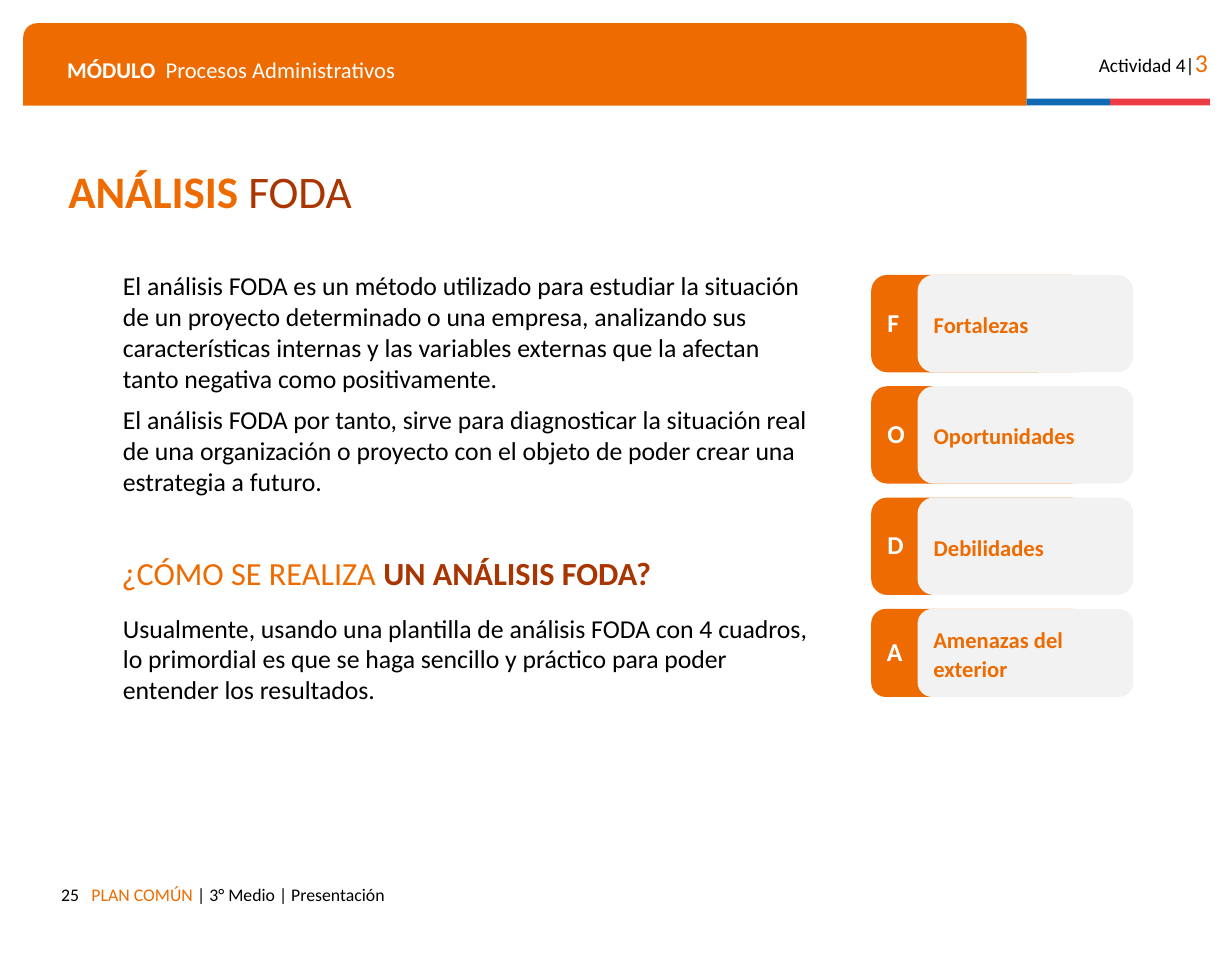
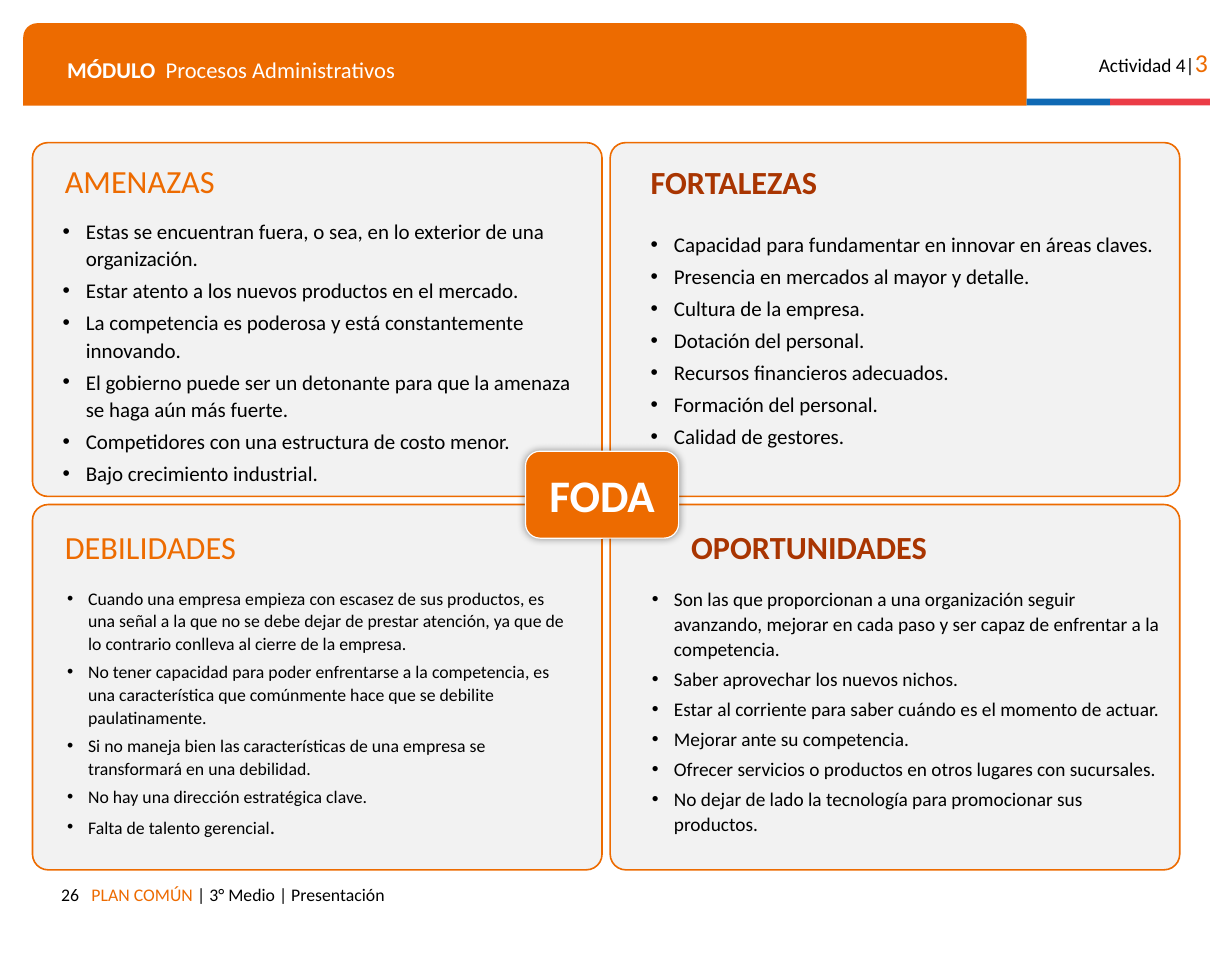
from lxml import etree
from pptx import Presentation
from pptx.dml.color import RGBColor
from pptx.enum.shapes import MSO_SHAPE
from pptx.enum.text import MSO_ANCHOR, PP_ALIGN
from pptx.oxml.ns import qn
from pptx.util import Inches, Pt

FONT = "Calibri"
COLORS = {
    "orange": "ED6B00", "rust": "A93501", "blue": "0F69B4", "red": "EB3C46",
    "gray": "F2F2F2", "black": "000000", "white": "FFFFFF",
}

# Content: a run is (text, size, color, bold)
MODULE = [("MÓDULO", 14, "white", True), ("\tProcesos Administrativos", 14, "white", False)]
ACTIVITY = [("Actividad 4|", 12, "black", False), ("3", 16, "orange", False)]
FOOTER = [("PLAN COMÚN ", 11, "orange", False), ("| 3° Medio | Presentación", 11, "black", False)]

TITLE = [("ANÁLISIS ", 28, "orange", True), ("FODA", 28, "rust", False)]
INTRO = [
    "El análisis FODA es un método utilizado para estudiar la situación de un proyecto "
    "determinado o una empresa, analizando sus características internas y las variables "
    "externas que la afectan tanto negativa como positivamente.",
    "El análisis FODA por tanto, sirve para diagnosticar la situación real de una "
    "organización o proyecto con el objeto de poder crear una estrategia a futuro.",
]
QUESTION = [("¿CÓMO SE REALIZA ", 20, "orange", False), ("UN ANÁLISIS FODA?", 20, "rust", True)]
ANSWER = [
    "Usualmente, usando una plantilla de análisis FODA con 4 cuadros, lo primordial es que "
    "se haga sencillo y práctico para poder entender los resultados.",
]
# letter, label, card height
CARDS = [
    ("F", "Fortalezas", 0.84), ("O", "Oportunidades", 0.84),
    ("D", "Debilidades", 0.84), ("A", "Amenazas del exterior", 0.76),
]

# Row by row; an item is a string or a list of (text, size)
QUADRANTS = [
    {"title": ("AMENAZAS", 20, "orange", False), "title_at": (0.46, 1.34),
     "list_at": (0.49, 1.82), "size": 13, "hanging": 0.2, "items": [
        "Estas se encuentran fuera, o sea, en lo exterior de una organización.",
        "Estar atento a los nuevos productos en el mercado.",
        "La competencia es poderosa y está constantemente innovando.",
        "El gobierno puede ser un detonante para que la amenaza se haga aún más fuerte.",
        "Competidores con una estructura de costo menor.",
        "Bajo crecimiento industrial."]},
    {"title": ("FORTALEZAS", 20, "rust", True), "title_at": (5.51, 1.35),
     "list_at": (5.56, 1.93), "size": 13, "hanging": 0.2, "items": [
        "Capacidad para fundamentar en innovar en áreas claves.",
        "Presencia en mercados al mayor y detalle.",
        "Cultura de la empresa.",
        "Dotación del personal.",
        "Recursos financieros adecuados.",
        "Formación del personal.",
        "Calidad de gestores."]},
    {"title": ("DEBILIDADES", 20, "orange", False), "title_at": (0.46, 4.5),
     "list_at": (0.51, 5), "size": 11, "hanging": 0.18, "items": [
        "Cuando una empresa empieza con escasez de sus productos, es una señal a la que no "
        "se debe dejar de prestar atención, ya que de lo contrario conlleva al cierre de la empresa.",
        "No tener capacidad para poder enfrentarse a la competencia, es una característica "
        "que comúnmente hace que se debilite paulatinamente.",
        "Si no maneja bien las características de una empresa se transformará en una debilidad.",
        "No hay una dirección estratégica clave.",
        [("Falta de talento gerencial", 11), (".", 13)]]},
    {"title": ("OPORTUNIDADES", 20, "rust", True), "title_at": (5.86, 4.5),
     "list_at": (5.56, 5), "size": 12, "hanging": 0.19, "items": [
        "Son las que proporcionan a una organización seguir avanzando, mejorar en cada paso "
        "y ser capaz de enfrentar a la competencia.",
        "Saber aprovechar los nuevos nichos.",
        "Estar al corriente para saber cuándo es el momento de actuar.",
        "Mejorar ante su competencia.",
        "Ofrecer servicios o productos en otros lugares con sucursales.",
        "No dejar de lado la tecnología para promocionar sus productos."]},
]


def rgb(name):
    return RGBColor.from_string(COLORS[name])


def add_xml(parent, tag, **attrs):
    return etree.SubElement(parent, qn(tag), attrs)


def add_bullet(p, hanging):
    pPr = p._p.get_or_add_pPr()
    pPr.set("marL", str(Inches(0.2)))
    pPr.set("indent", str(-Inches(hanging)))
    add_xml(add_xml(pPr, "a:buClr"), "a:srgbClr", val=COLORS["black"])
    add_xml(pPr, "a:buFont", typeface="Arial")
    add_xml(pPr, "a:buChar", char="•")


def add_tab(p, position):
    tabs = add_xml(p._p.get_or_add_pPr(), "a:tabLst")
    add_xml(tabs, "a:tab", pos=str(Inches(position)), algn="l")


def fill_text(sp, paragraphs, inset=(0.1, 0.1), anchor=MSO_ANCHOR.TOP,
              align=PP_ALIGN.LEFT, spacing=None, before=0, hanging=None, tab=None):
    """Write paragraphs, each a list of runs; inset is (sides, top and bottom)."""
    tf = sp.text_frame
    tf.word_wrap = True
    tf.vertical_anchor = anchor
    tf.margin_left = tf.margin_right = Inches(inset[0])
    tf.margin_top = tf.margin_bottom = Inches(inset[1])
    for i, runs in enumerate(paragraphs):
        p = tf.add_paragraph() if i else tf.paragraphs[0]
        if hanging:
            add_bullet(p, hanging)
        if tab:
            add_tab(p, tab)
        p.alignment = align
        if spacing:
            p.line_spacing = spacing
        if i and before:
            p.space_before = Pt(before)
        for text, size, color, bold in runs:
            r = p.add_run()
            r.text = text
            r.font.name = FONT
            r.font.size = Pt(size)
            r.font.bold = bold
            r.font.color.rgb = rgb(color)


def add_text(s, at, paragraphs, **style):
    fill_text(s.shapes.add_textbox(*map(Inches, at)), paragraphs, **style)


def add_box(s, at, fill, kind=MSO_SHAPE.RECTANGLE, radius=None, line=None, width=1):
    sp = s.shapes.add_shape(kind, *map(Inches, at))
    sp.shadow.inherit = False
    sp.fill.solid()
    sp.fill.fore_color.rgb = rgb(fill)
    if radius is not None:
        sp.adjustments[0] = radius
    if line:
        sp.line.color.rgb = rgb(line)
        sp.line.width = Pt(width)
    else:
        sp.line.fill.background()
    return sp


def add_glow_shadow(sp):
    effects = sp._element.spPr.find(qn("a:effectLst"))
    shadow = add_xml(effects, "a:outerShdw", blurRad=str(Pt(5)), dist="0", dir="0",
                     algn="ctr", rotWithShape="0")
    add_xml(add_xml(shadow, "a:srgbClr", val=COLORS["black"]), "a:alpha", val="40000")


def new_slide(prs, number):
    """Blank slide with the shared header band and footer."""
    s = prs.slides.add_slide(prs.slide_layouts[6])
    add_box(s, (0.2, 0.2, 8.65, 0.71), "orange", MSO_SHAPE.ROUND_2_SAME_RECTANGLE, 0.17)
    add_box(s, (8.85, 0.85, 0.72, 0.06), "blue")
    add_box(s, (9.57, 0.85, 0.86, 0.06), "red")
    add_text(s, (0.48, 0.38, 8.14, 0.41), [MODULE], tab=0.85)
    add_text(s, (9.23, 0.3, 1.28, 0.43), [ACTIVITY], align=PP_ALIGN.RIGHT)
    add_text(s, (0.69, 7.53, 7.14, 0.35), [FOOTER])
    add_text(s, (0.41, 7.53, 0.37, 0.35), [[(str(number), 11, "black", False)]],
             align=PP_ALIGN.RIGHT)
    return s


def body(texts):
    return [[(text, 16, "black", False)] for text in texts]


def build_explanation(prs):
    s = new_slide(prs, 25)
    middle = MSO_ANCHOR.MIDDLE
    add_text(s, (0.49, 1.39, 9.28, 0.59), [TITLE], anchor=middle, spacing=0.8)
    add_text(s, (1.01, 2.28, 6.1, 2.08), body(INTRO), inset=(0.05, 0.05), before=6)
    add_text(s, (0.95, 4.72, 5.21, 0.47), [QUESTION], anchor=middle, spacing=0.9)
    add_text(s, (1.01, 5.23, 6.1, 0.88), body(ANSWER), inset=(0.05, 0.05))

    # Letter cards, each label card overlapping its letter card
    top, gap = 2.37, 0.12
    for letter, label, height in CARDS:
        for left, fill, run, spacing in (
            (7.51, "orange", (letter, 16, "white", True), 0.94),
            (7.91, "gray", (label, 14, "orange", True), 1.07),
        ):
            card = add_box(s, (left, top, 1.86, height), fill,
                           MSO_SHAPE.ROUNDED_RECTANGLE, 0.167)
            fill_text(card, [[run]], inset=(0.1, 0.05), anchor=middle, spacing=spacing)
        top += height + gap


def build_matrix(prs):
    s = new_slide(prs, 26)
    columns, rows, width = (0.28, 5.26), ((1.23, 3.05), (4.35, 3.15)), 4.91
    for i, quadrant in enumerate(QUADRANTS):
        top, height = rows[i // 2]
        add_box(s, (columns[i % 2], top, width, height), "gray",
                MSO_SHAPE.ROUNDED_RECTANGLE, 0.043, "orange")
        add_text(s, (*quadrant["title_at"], 2.41, 0.47), [[quadrant["title"]]],
                 anchor=MSO_ANCHOR.MIDDLE, spacing=0.9)
        items = [[(item, quadrant["size"])] if isinstance(item, str) else item
                 for item in quadrant["items"]]
        add_text(s, (*quadrant["list_at"], 4.5, 2.28),
                 [[(text, size, "black", False) for text, size in item] for item in items],
                 inset=(0.05, 0.05), spacing=1.08, before=3, hanging=quadrant["hanging"])

    # Badge over the centre of the matrix
    badge = add_box(s, (4.53, 3.89, 1.32, 0.75), "orange",
                    MSO_SHAPE.ROUNDED_RECTANGLE, 0.167, "white", 0.75)
    add_glow_shadow(badge)
    fill_text(badge, [[("FODA", 28, "white", True)]], inset=(0.05, 0.05),
              anchor=MSO_ANCHOR.MIDDLE, align=PP_ALIGN.CENTER)


def main():
    prs = Presentation()
    prs.slide_width, prs.slide_height = Inches(10.62), Inches(8.26)
    build_explanation(prs)
    build_matrix(prs)
    prs.save("out.pptx")


if __name__ == "__main__":
    main()
